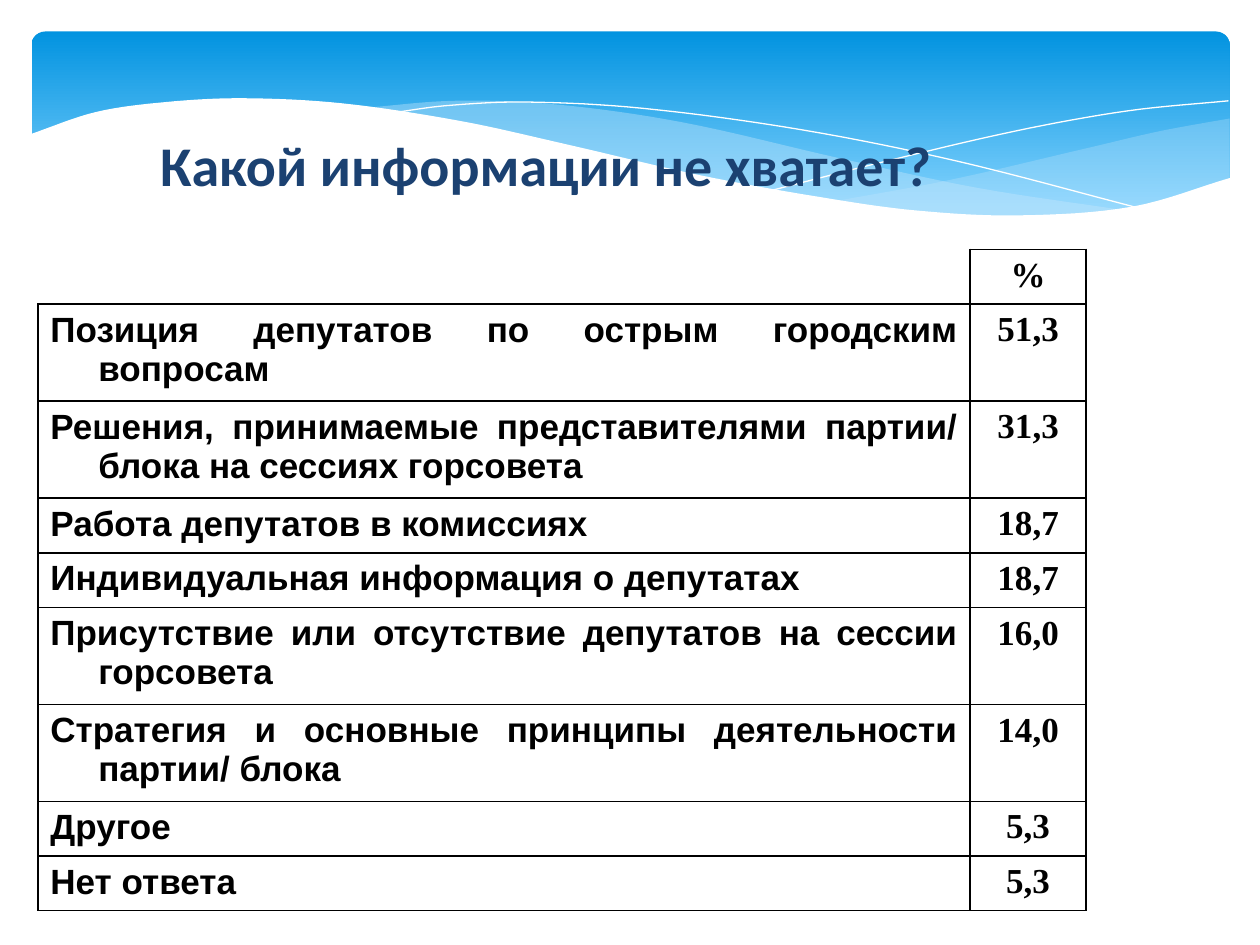
"""Build a slide with a wavy banner and a table of missing information."""
from itertools import pairwise
from lxml.etree import SubElement
from pptx import Presentation
from pptx.dml.color import RGBColor
from pptx.enum.shapes import MSO_SHAPE
from pptx.enum.text import MSO_ANCHOR, PP_ALIGN
from pptx.oxml.ns import qn
from pptx.util import Inches, Pt

WHITE = RGBColor(0xFF, 0xFF, 0xFF)
BLACK = RGBColor(0, 0, 0)
NAVY = RGBColor(0x1B, 0x41, 0x71)
DEEP = RGBColor(0x02, 0x93, 0xE0)
SKY = RGBColor(0x83, 0xD3, 0xFE)
PALE = RGBColor(0xC6, 0xE7, 0xFC)

deck = Presentation()
deck.slide_width, deck.slide_height = Inches(10), Inches(7.5)
slide = deck.slides.add_slide(deck.slide_layouts[6])
shapes = slide.shapes
UNIT = deck.slide_width // 1000
STEPS = 8


def bend(knots):
    """Return points of a smooth cubic curve through the knots."""
    last = len(knots) - 1
    slopes = []
    for i in range(last + 1):
        (xa, ya), (xb, yb) = knots[max(i - 1, 0)], knots[min(i + 1, last)]
        slopes.append((yb - ya) / (xb - xa))
    points = [knots[0]]
    for ((xa, ya), (xb, yb)), (ma, mb) in zip(pairwise(knots), pairwise(slopes)):
        span = xb - xa
        for step in range(1, STEPS + 1):
            t = step / STEPS
            ease = t * t * (3 - 2 * t)
            swing = t * (1 - t) * (ma * (1 - t) - mb * t)
            points.append((xa + span * t, ya + (yb - ya) * ease + span * swing))
    return points


def draw(points, closed):
    """Draw an outline given in grid units."""
    start, *rest = [(x * UNIT, y * UNIT) for x, y in points]
    pen = shapes.build_freeform(*start)
    pen.add_line_segments(rest, close=closed)
    shape = pen.convert_to_shape()
    shape.shadow.inherit = False
    return shape


banner = shapes.add_shape(MSO_SHAPE.ROUNDED_RECTANGLE, *[n * UNIT for n in (25, 25, 951, 156)])
banner.adjustments[0] = 0.07
banner.shadow.inherit = False
banner.line.fill.background()
banner.fill.gradient()
banner.fill.gradient_angle = 270
for stop, color, place in zip(banner.fill.gradient_stops, (DEEP, SKY), (0, 0.9)):
    stop.color.rgb = color
    stop.position = place

RIGHT_TOP = [(661, 160), (753, 143), (861, 118), (921, 104), (976, 94)]
RIGHT_BASE = [(976, 141), (921, 160), (872, 169), (814, 172), (745, 169), (661, 160)]
LEFT_TOP = [(286, 86), (361, 80), (442, 83), (541, 97), (668, 126), (775, 149), (893, 167)]
LEFT_BASE = [(893, 167), (828, 173), (748, 170), (665, 161), (566, 143), (449, 116),
             (362, 97), (286, 86)]
FALL = [(309, 90), (353, 84), (416, 81), (510, 86), (636, 103), (760, 128), (907, 166)]
RISE = [(613, 151), (695, 130), (806, 104), (895, 88), (975, 80)]
FRONT_TOP = [(23, 107), (76, 89), (132, 81), (193, 78), (271, 82), (365, 96), (447, 114),
             (555, 139), (648, 156), (726, 167), (808, 171), (899, 164), (977, 141)]
FRONT_BASE = [(977, 224), (23, 224)]

for top, base, alpha in ((RIGHT_TOP, RIGHT_BASE, 29), (LEFT_TOP, LEFT_BASE, 40)):
    veil = draw(bend(top) + bend(base), True)
    veil.line.fill.background()
    veil.fill.solid()
    veil.fill.fore_color.rgb = PALE
    tint = veil.element.spPr.find(qn("a:solidFill")).find(qn("a:srgbClr"))
    SubElement(tint, qn("a:alpha"), val=str(alpha * 1000))

for knots in (FALL, RISE):
    thread = draw(bend(knots), False)
    thread.fill.background()
    thread.line.color.rgb = WHITE
    thread.line.width = Pt(0)

front = draw(bend(FRONT_TOP) + FRONT_BASE, True)
front.line.fill.background()
front.fill.solid()
front.fill.fore_color.rgb = WHITE

title = shapes.add_textbox(*[n * UNIT for n in (0, 68, 867, 125)]).text_frame
title.word_wrap = True
title.vertical_anchor = MSO_ANCHOR.MIDDLE
head = title.paragraphs[0]
head.text = "Какой информации не хватает?"
head.alignment = PP_ALIGN.CENTER
head.font.name, head.font.size, head.font.bold = "Calibri", Pt(32), True
head.font.color.rgb = NAVY

LOW, TALL = 43, 77
WIDTHS = (740, 92)
ROWS = [
    ("", "%", LOW),
    ("Позиция депутатов по острым городским вопросам", "51,3", TALL),
    ("Решения, принимаемые представителями партии/ блока на сессиях горсовета", "31,3", TALL),
    ("Работа депутатов в комиссиях", "18,7", LOW),
    ("Индивидуальная информация о депутатах", "18,7", LOW),
    ("Присутствие или отсутствие депутатов на сессии горсовета", "16,0", TALL),
    ("Стратегия и основные принципы деятельности партии/ блока", "14,0", TALL),
    ("Другое", "5,3", LOW),
    ("Нет ответа", "5,3", LOW),
]
STYLES = [("Arial", PP_ALIGN.JUSTIFY), ("Times New Roman", PP_ALIGN.CENTER)]
INDENT = Inches(0.38)

depth = sum(height for *_, height in ROWS)
frame = shapes.add_table(len(ROWS), 2, *[n * UNIT for n in (30, 198, sum(WIDTHS), depth)])
table = frame.table
table.first_row = table.horz_banding = False
for column, width in zip(table.columns, WIDTHS):
    column.width = width * UNIT

for r, (topic, share, height) in enumerate(ROWS):
    table.rows[r].height = height * UNIT
    for c, (text, (font, align)) in enumerate(zip((topic, share), STYLES)):
        cell = table.cell(r, c)
        corner = r == c == 0
        props = cell._tc.get_or_add_tcPr()
        for side in ("lnL", "lnR", "lnT", "lnB"):
            line = SubElement(props, qn("a:" + side), w=str(Pt(1)))
            if corner and side in ("lnL", "lnT"):
                SubElement(line, qn("a:noFill"))
            else:
                ink = SubElement(line, qn("a:solidFill"))
                SubElement(ink, qn("a:srgbClr"), val=str(BLACK))
        cell.fill.background()
        para = cell.text_frame.paragraphs[0]
        para.text = text
        para.alignment = align
        para.font.name, para.font.size, para.font.bold = font, Pt(20), True
        para.font.color.rgb = BLACK
        layout = para._p.get_or_add_pPr()
        layout.set("marL", str(INDENT))
        layout.set("indent", str(-INDENT))

deck.save("out.pptx")
